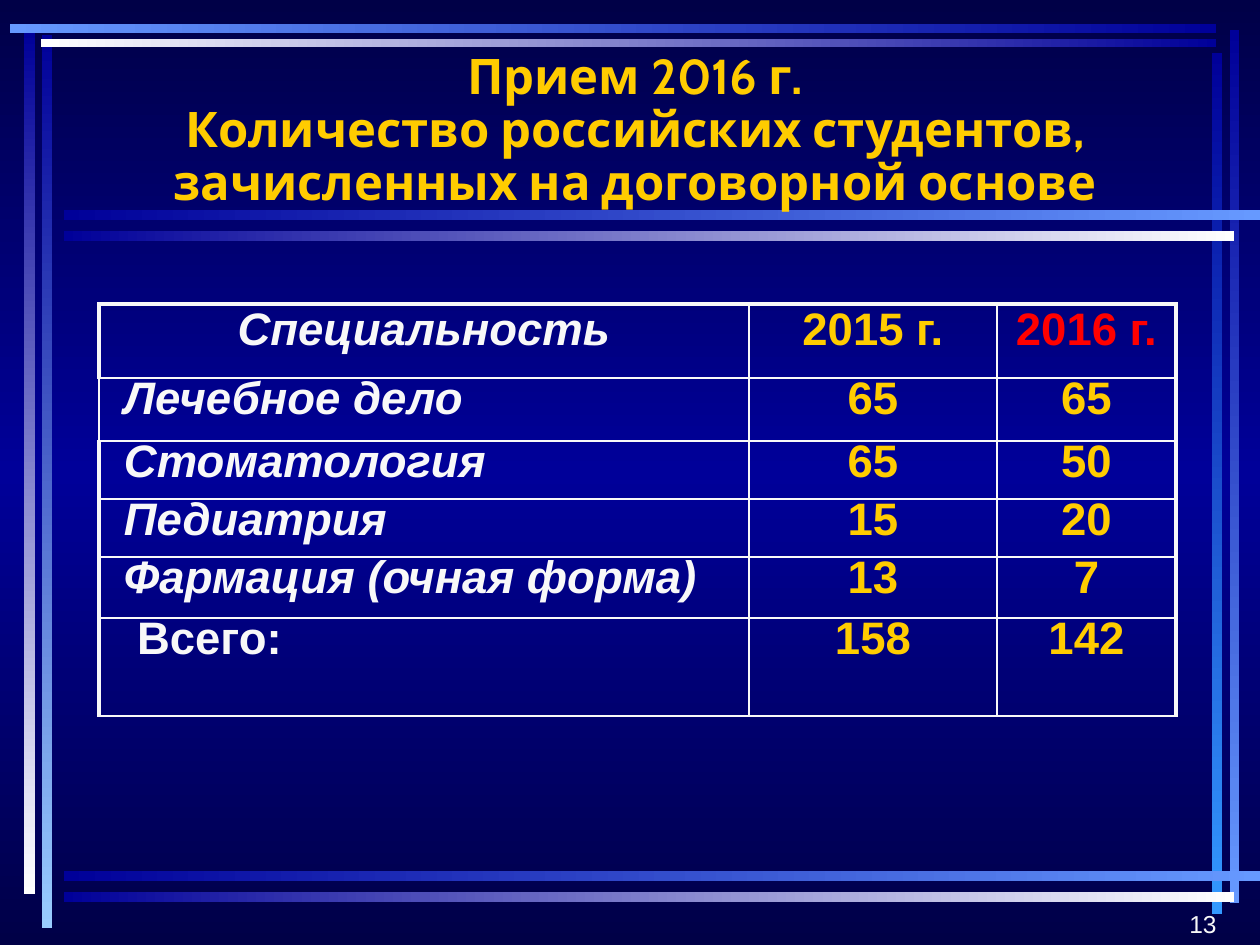
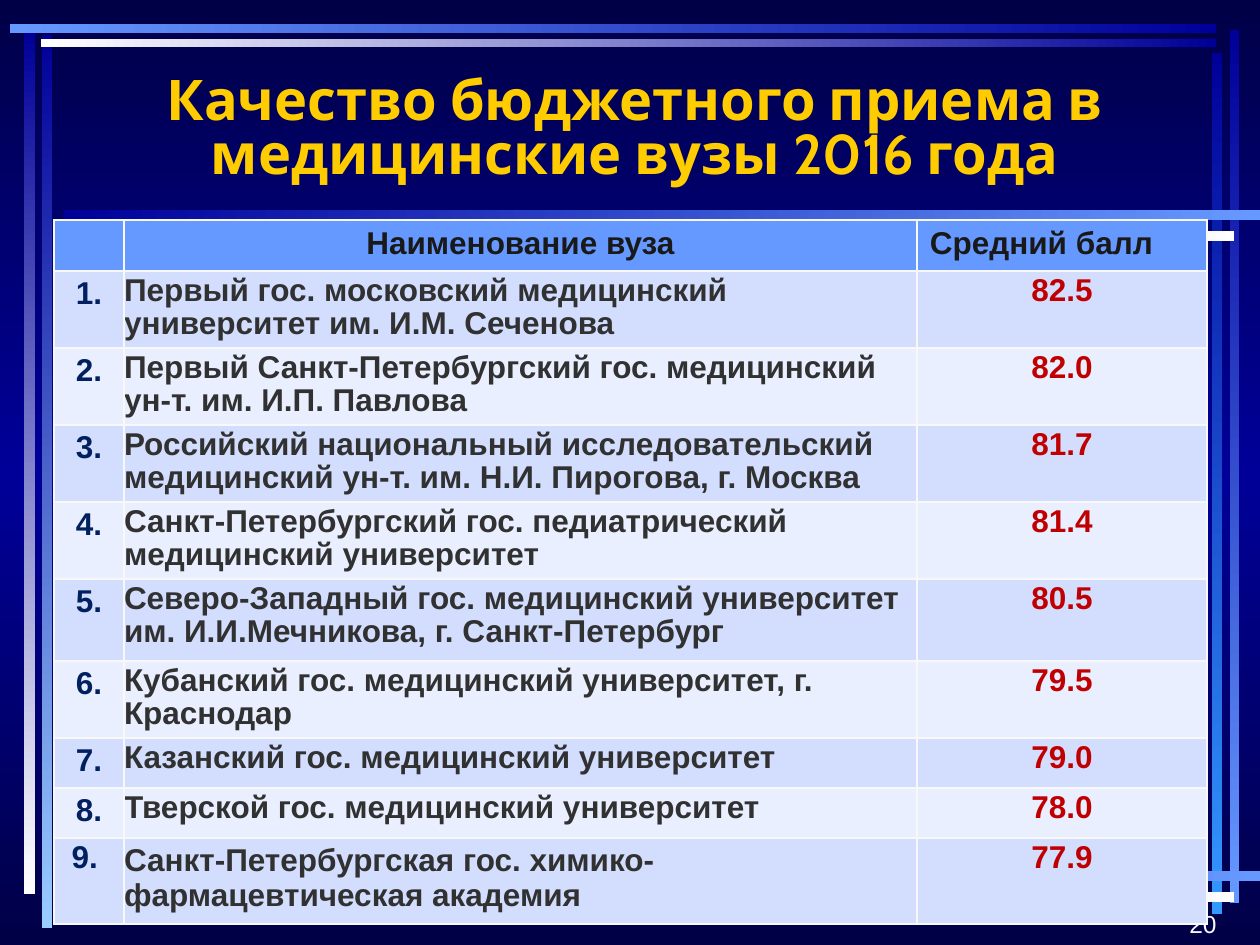
"""Build two slides on 2016 admissions: contract intake and average scores."""
from copy import deepcopy

from lxml import etree
from pptx import Presentation
from pptx.dml.color import RGBColor
from pptx.enum.shapes import MSO_SHAPE
from pptx.enum.text import MSO_ANCHOR, PP_ALIGN
from pptx.oxml.ns import qn
from pptx.util import Pt

RECT = MSO_SHAPE.RECTANGLE
MIDDLE = MSO_ANCHOR.MIDDLE
LEFT, CENTER, RIGHT = PP_ALIGN.LEFT, PP_ALIGN.CENTER, PP_ALIGN.RIGHT
SCALE = 914400 / 126
COLORS = {
    "night": "000047", "navy": "000099", "blue": "6699FF", "azure": "3399FF",
    "sky": "99CCFF", "white": "FFFFFF", "pale": "F8F8F8", "gold": "FFCC00",
    "red": "FF0000", "ink": "191919", "text": "313131", "index": "002060",
    "score": "C00000", "odd": "D3DEFF", "even": "EAEFFF",
}

DOWN, ACROSS = 270, 0
BARS = [
    (42, 35, 10, 893, "navy", "sky", DOWN),
    (24, 31, 11, 863, "navy", "white", DOWN),
    (1230, 30, 9, 873, "navy", "blue", DOWN),
    (1212, 53, 10, 861, "navy", "azure", DOWN),
    (41, 39, 1175, 8, "white", "navy", ACROSS),
    (10, 24, 1206, 9, "blue", "navy", ACROSS),
]
for top in (210, 871):
    BARS += [(64, top, 1196, 10, "navy", "blue", ACROSS),
             (64, top + 21, 1170, 10, "navy", "white", ACROSS)]

INTAKE = [
    ("Специальность", "2015 г.", "2016 г."),
    ("Лечебное дело", "65", "65"),
    ("Стоматология", "65", "50"),
    ("Педиатрия", "15", "20"),
    ("Фармация (очная форма)", "13", "7"),
    ("Всего:", "158", "142"),
]
SCORES = [
    ("", "Наименование вуза", "Средний балл"),
    ("1.", "Первый гос. московский медицинский университет им. И.М. Сеченова", "82.5"),
    ("2.", "Первый Санкт-Петербургский гос. медицинский ун-т. им. И.П. Павлова", "82.0"),
    ("3.", "Российский национальный исследовательский медицинский ун-т. "
           "им. Н.И. Пирогова, г. Москва", "81.7"),
    ("4.", "Санкт-Петербургский гос. педиатрический медицинский университет", "81.4"),
    ("5.", "Северо-Западный гос. медицинский университет "
           "им. И.И.Мечникова, г. Санкт-Петербург", "80.5"),
    ("6.", "Кубанский гос. медицинский университет, г. Краснодар", "79.5"),
    ("7.", "Казанский гос. медицинский университет", "79.0"),
    ("8.", "Тверской гос. медицинский университет", "78.0"),
    ("9. ", "Санкт-Петербургская гос. химико-фармацевтическая академия", "77.9"),
]


def px(num):
    return round(num * SCALE)


def rgb(name):
    return RGBColor.from_string(COLORS[name])


def shade(fill, names, angle):
    fill.gradient_angle = angle
    last = len(names) - 1
    for i, (stop, name) in enumerate(zip(fill.gradient_stops, names)):
        stop.color.rgb = rgb(name)
        stop.position = i / last


def paint_back(master):
    fill = master.background.fill
    fill.gradient()
    first = next(master._element.iter(qn("a:gs")))
    first.addnext(deepcopy(first))
    shade(fill, ("night", "navy", "night"), DOWN)


def write(frame, text, size, color, align=LEFT, bold=True, italic=False,
          face="Arial", space=None):
    para = frame.paragraphs[0]
    para.text = text
    para.alignment = align
    if space:
        para.line_spacing = space
    font = para.font
    font.size, font.bold, font.italic = Pt(size), bold, italic
    font.color.rgb = rgb(color)
    font.name = face
    return para


def add_box(slide, box):
    frame = slide.shapes.add_textbox(*map(px, box)).text_frame
    frame.word_wrap = True
    frame.vertical_anchor = MIDDLE
    return frame


def cast_shadow(run):
    effects = etree.SubElement(run._r.get_or_add_rPr(), qn("a:effectLst"))
    drop = etree.SubElement(effects, qn("a:outerShdw"), dist="35921", dir="2700000")
    color = etree.SubElement(drop, qn("a:srgbClr"), val="000000")
    etree.SubElement(color, qn("a:alpha"), val="50000")


def add_page(deck, title, size, space, number):
    slide = deck.slides.add_slide(deck.slide_layouts[6])
    for *box, start, end, angle in BARS:
        bar = slide.shapes.add_shape(RECT, *map(px, box))
        bar.shadow.inherit = False
        bar.line.fill.background()
        bar.fill.gradient()
        shade(bar.fill, (start, end), angle)
    write(add_box(slide, (1061, 903, 168, 42)), number, 14, "pale", RIGHT, bold=False)
    frame = add_box(slide, (63, 42, 1144, 179))
    frame.margin_left = frame.margin_right = frame.margin_top = frame.margin_bottom = 0
    para = write(frame, title, size, "gold", CENTER, face="Cabin", space=space)
    for run in para.runs:
        cast_shadow(run)
    return slide


def add_grid(slide, left, top, cols, rows):
    table = slide.shapes.add_table(len(rows), len(cols), px(left), px(top),
                                   px(sum(cols)), px(sum(rows))).table
    table.first_row = table.horz_banding = False
    for col, width in zip(table.columns, cols):
        col.width = px(width)
    for row, height in zip(table.rows, rows):
        row.height = px(height)
    return table


def edge(cell, heavy=""):
    props = cell._tc.get_or_add_tcPr()
    for side in "LRTB":
        width = Pt(2.25 if side in heavy else 1)
        line = etree.SubElement(props, qn("a:ln" + side), w=str(width))
        fill = etree.SubElement(line, qn("a:solidFill"))
        etree.SubElement(fill, qn("a:srgbClr"), val=COLORS["pale"])


def pad(cell, side, tall):
    cell.margin_left = cell.margin_right = px(side)
    cell.margin_top = cell.margin_bottom = px(tall)


def fill_intake(slide):
    table = add_grid(slide, 99, 304, (650, 248, 179), (74, 63, 58, 58, 61, 98))
    last = len(INTAKE) - 1
    for r, row in enumerate(INTAKE):
        for c, text in enumerate(row):
            cell = table.cell(r, c)
            heavy = "T" * (r == 0) + "L" * (c == 0 and r != 1) + "R" * (c == 2)
            edge(cell, heavy)
            cell.fill.background()
            pad(cell, 0, 0)
            if c == 0 and r:
                cell.margin_left = px(38 if r == last else 25)
            color = "pale" if c == 0 else "red" if (r, c) == (0, 2) else "gold"
            write(cell.text_frame, text, 26, color, LEFT if c == 0 and r else CENTER,
                  italic=c == 0 and r != last, space=0.9 if r else None)


def fill_scores(slide):
    table = add_grid(slide, 54, 220, (70, 793, 290),
                     (51, 77, 77, 77, 77, 82, 77, 50, 50, 86))
    last = len(SCORES) - 1
    inks = ("index", "text", "score")
    for r, row in enumerate(SCORES):
        for c, text in enumerate(row):
            cell = table.cell(r, c)
            edge(cell)
            cell.fill.solid()
            cell.fill.fore_color.rgb = rgb("blue" if r == 0 else ("even", "odd")[r % 2])
            if r == 0:
                pad(cell, 13, 6)
                write(cell.text_frame, text, 18, "ink", LEFT if c == 2 else CENTER)
                continue
            pad(cell, 0, 5)
            loose = c == (1 if r == last else 0)
            write(cell.text_frame, text, 18, inks[c], LEFT if c == 1 else CENTER,
                  space=None if loose else Pt(18.6))


def main():
    deck = Presentation()
    deck.slide_width, deck.slide_height = px(1260), px(945)
    paint_back(deck.slide_master)
    fill_intake(add_page(deck, "Прием 2016 г.\vКоличество российских студентов, "
                               "зачисленных на договорной основе", 28, 0.9, "13"))
    fill_scores(add_page(deck, "Качество бюджетного приема в медицинские вузы 2016 года",
                         32, 0.8, "20"))
    deck.save("out.pptx")


if __name__ == "__main__":
    main()
